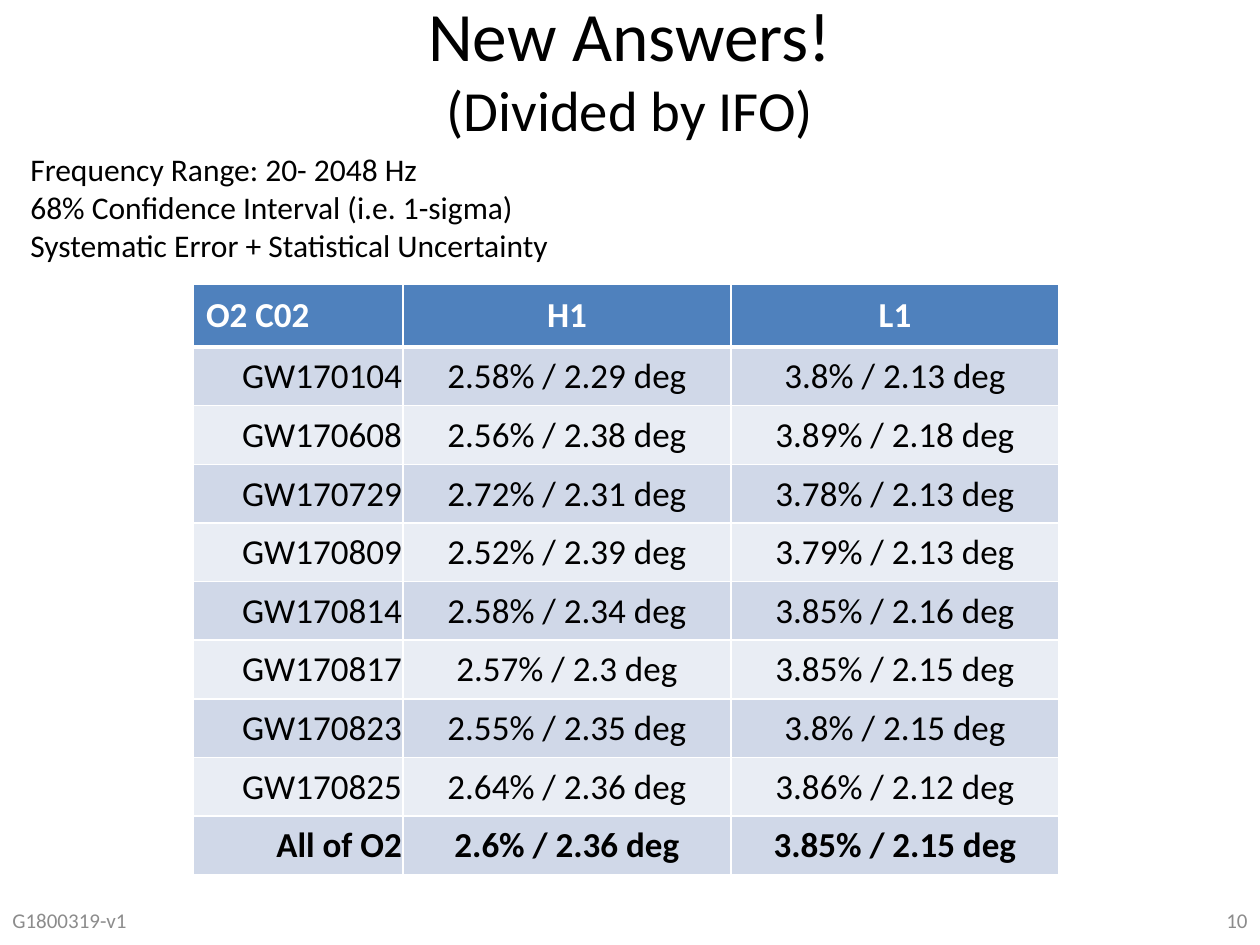
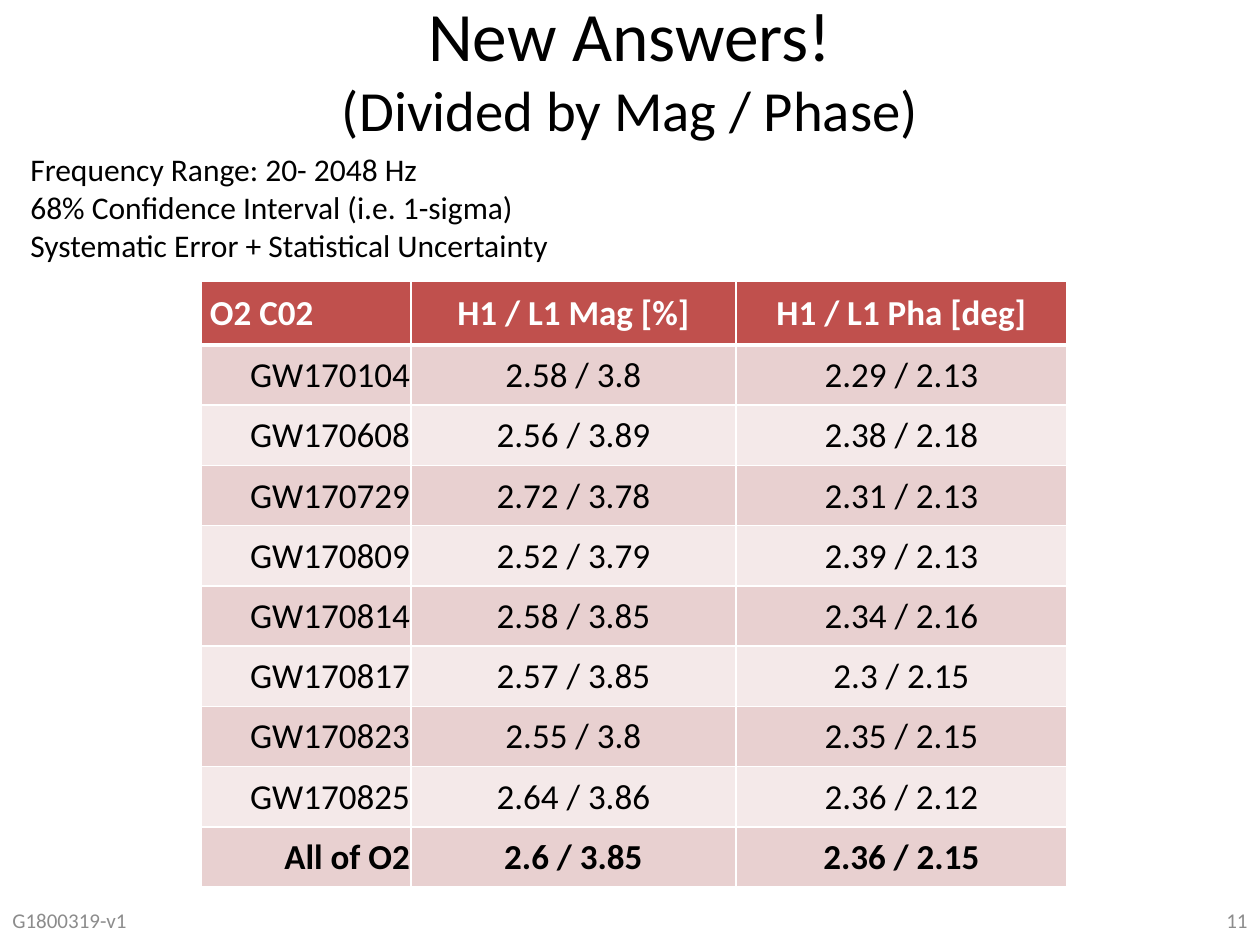
"""Build two slides that tabulate detector uncertainty by interferometer and by magnitude / phase."""
from lxml.etree import SubElement
from pptx import Presentation
from pptx.dml.color import RGBColor
from pptx.enum.text import MSO_ANCHOR as Anchor, PP_ALIGN as Align
from pptx.oxml.ns import qn
from pptx.util import Emu, Pt

FONT, BLACK, WHITE, GREY = "Calibri", "000000", "FFFFFF", "8C8C8C"
TITLE = "New Answers!"
DOCUMENT_NUMBER = "G1800319-v1"
NOTES = [
    "Frequency Range: 20- 2048 Hz",
    "68% Confidence Interval (i.e. 1-sigma)",
    "Systematic Error + Statistical Uncertainty",
]
CORNER = "O2 C02"

# event, H1 magnitude, H1 phase, L1 magnitude, L1 phase
MEASUREMENTS = [
    ("GW170104", "2.58", "2.29", "3.8", "2.13"),
    ("GW170608", "2.56", "2.38", "3.89", "2.18"),
    ("GW170729", "2.72", "2.31", "3.78", "2.13"),
    ("GW170809", "2.52", "2.39", "3.79", "2.13"),
    ("GW170814", "2.58", "2.34", "3.85", "2.16"),
    ("GW170817", "2.57", "2.3", "3.85", "2.15"),
    ("GW170823", "2.55", "2.35", "3.8", "2.15"),
    ("GW170825", "2.64", "2.36", "3.86", "2.12"),
    ("All of O2", "2.6", "2.36", "3.85", "2.15"),
]
SLIDES = [
    {
        "number": "10",
        "subtitle": "(Divided by IFO)",
        "headers": [CORNER, "H1", "L1"],
        "cells": ["{0}", "{1}% / {2} deg", "{3}% / {4} deg"],
        "colors": ("4F81BD", "D0D8E8", "E9EDF4"),
        "origin": (193, 284),
        "columns": (210, 328, 328),
        "header_height": 63,
        "table_height": 591,
        "corner_inset": 13,
    },
    {
        "number": "11",
        "subtitle": "(Divided by Mag / Phase)",
        "headers": [CORNER, "H1 / L1 Mag [%]", "H1 / L1 Pha [deg]"],
        "cells": ["{0}", "{1} / {3}", "{2} / {4}"],
        "colors": ("C0504D", "E8D0D0", "F4E9E9"),
        "origin": (201, 281),
        "columns": (210, 325, 331),
        "header_height": 64,
        "table_height": 606,
        "corner_inset": 9,
    },
]

SLIDE_WIDTH, SLIDE_HEIGHT = 1260, 945
TITLE_BOX = (0, 0, SLIDE_WIDTH, 135)
NOTES_BOX = (18, 144, 552, 127)
FOOTER_WIDTH, FOOTER_HEIGHT = 294, 50
FOOTER_TOP = SLIDE_HEIGHT - FOOTER_HEIGHT


def px(length):
    return Emu(round(length * 914400 / 126))


def color(value):
    return RGBColor.from_string(value)


def apply(target, **values):
    for name, value in values.items():
        setattr(target, name, value)


def add_run(paragraph, text, size, ink=BLACK, bold=False):
    run = paragraph.add_run()
    run.text = text
    apply(run.font, name=FONT, size=Pt(size), bold=bold)
    run.font.color.rgb = color(ink)


def add_text(slide, box, lines, align=Align.LEFT, anchor=Anchor.MIDDLE, wrap=True):
    """Add a text box in which each line is a list of (text, size, colour) runs."""
    frame = slide.shapes.add_textbox(*map(px, box)).text_frame
    apply(frame, word_wrap=wrap, vertical_anchor=anchor)
    for index, runs in enumerate(lines):
        paragraph = frame.add_paragraph() if index else frame.paragraphs[0]
        paragraph.alignment = align
        for position, run in enumerate(runs):
            if position:
                paragraph.add_line_break()
            add_run(paragraph, *run)


def set_borders(cell, **widths):
    properties = cell._tc.get_or_add_tcPr()
    for side, width in widths.items():
        line = SubElement(properties, qn(f"a:ln{side}"), w=str(Pt(width)))
        fill = SubElement(line, qn("a:solidFill"))
        SubElement(fill, qn("a:srgbClr"), val=WHITE)


def add_table(slide, page):
    header_color, *band_colors = page["colors"]
    rows = [page["headers"]]
    rows += [[cell.format(*values) for cell in page["cells"]] for values in MEASUREMENTS]
    last = len(rows) - 1
    body_height = (page["table_height"] - page["header_height"]) / last
    box = (*page["origin"], sum(page["columns"]), page["table_height"])
    table = slide.shapes.add_table(len(rows), len(page["columns"]), *map(px, box)).table
    for column, width in zip(table.columns, page["columns"]):
        column.width = px(width)
    for r, texts in enumerate(rows):
        is_header = r == 0
        table.rows[r].height = px(page["header_height"] if is_header else body_height)
        for c, text in enumerate(texts):
            cell = table.cell(r, c)
            inset = page["corner_inset"] if is_header and c == 0 else 1
            apply(cell, vertical_anchor=Anchor.MIDDLE, margin_left=px(inset),
                  margin_right=px(1), margin_top=px(1), margin_bottom=0)
            set_borders(cell, L=1, R=1, T=3 if r == 1 else 1, B=3 if is_header else 1)
            cell.fill.solid()
            cell.fill.fore_color.rgb = color(header_color if is_header else band_colors[(r - 1) % 2])
            paragraph = cell.text_frame.paragraphs[0]
            label_align = Align.LEFT if is_header else Align.RIGHT
            paragraph.alignment = Align.CENTER if c else label_align
            add_run(paragraph, text, 20, WHITE if is_header else BLACK, r in (0, last))


def add_page(presentation, page):
    slide = presentation.slides.add_slide(presentation.slide_layouts[6])
    add_text(slide, TITLE_BOX, [[(TITLE, 39.6), (page["subtitle"], 32.4)]], Align.CENTER)
    footers = [
        (0, DOCUMENT_NUMBER, Align.LEFT),
        (SLIDE_WIDTH - FOOTER_WIDTH, page["number"], Align.RIGHT),
    ]
    for left, text, align in footers:
        add_text(slide, (left, FOOTER_TOP, FOOTER_WIDTH, FOOTER_HEIGHT), [[(text, 12, GREY)]], align)
    add_table(slide, page)
    add_text(slide, NOTES_BOX, [[(note, 18)] for note in NOTES], anchor=Anchor.TOP, wrap=False)


def main():
    presentation = Presentation()
    apply(presentation, slide_width=px(SLIDE_WIDTH), slide_height=px(SLIDE_HEIGHT))
    for page in SLIDES:
        add_page(presentation, page)
    presentation.save("out.pptx")


if __name__ == "__main__":
    main()
